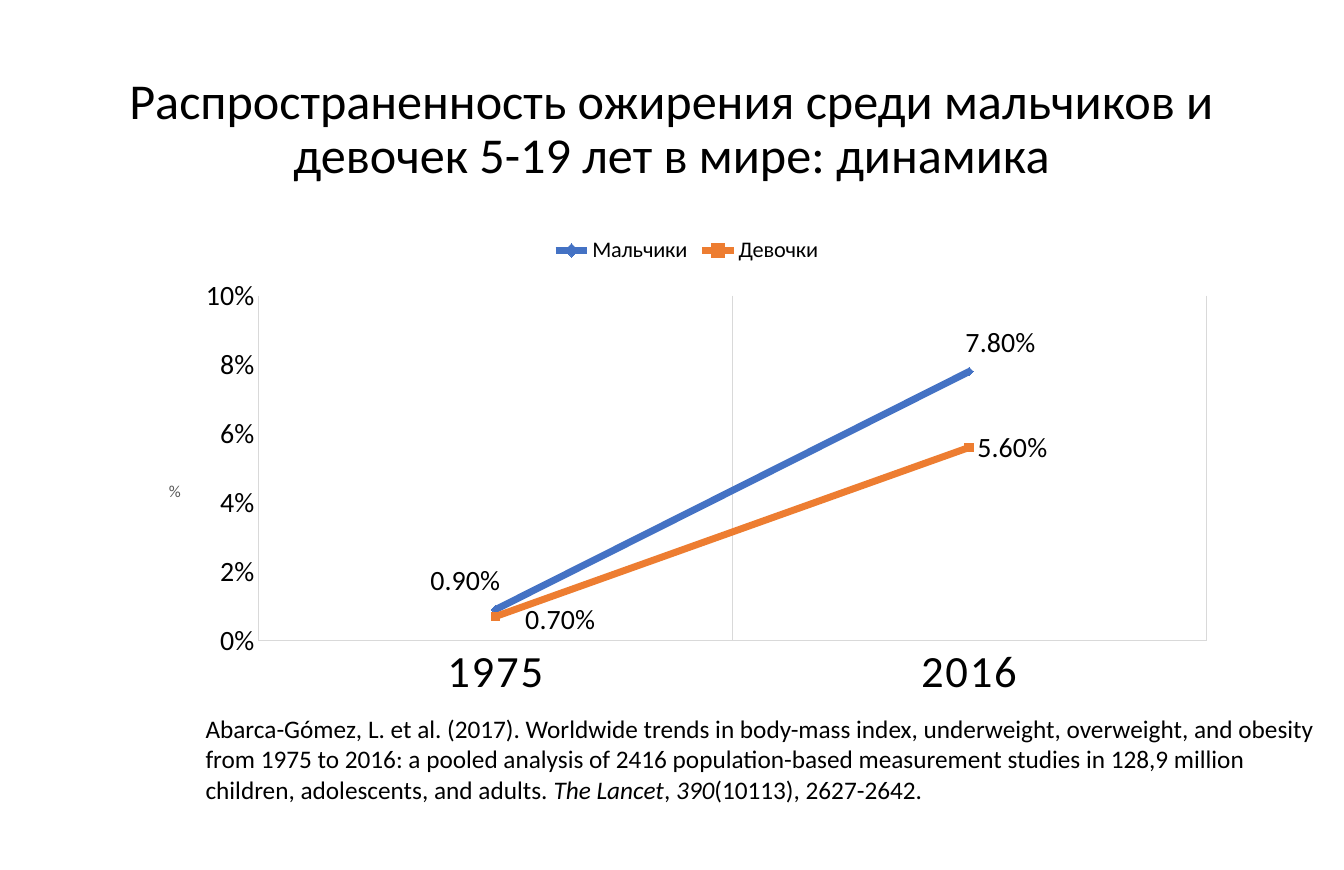
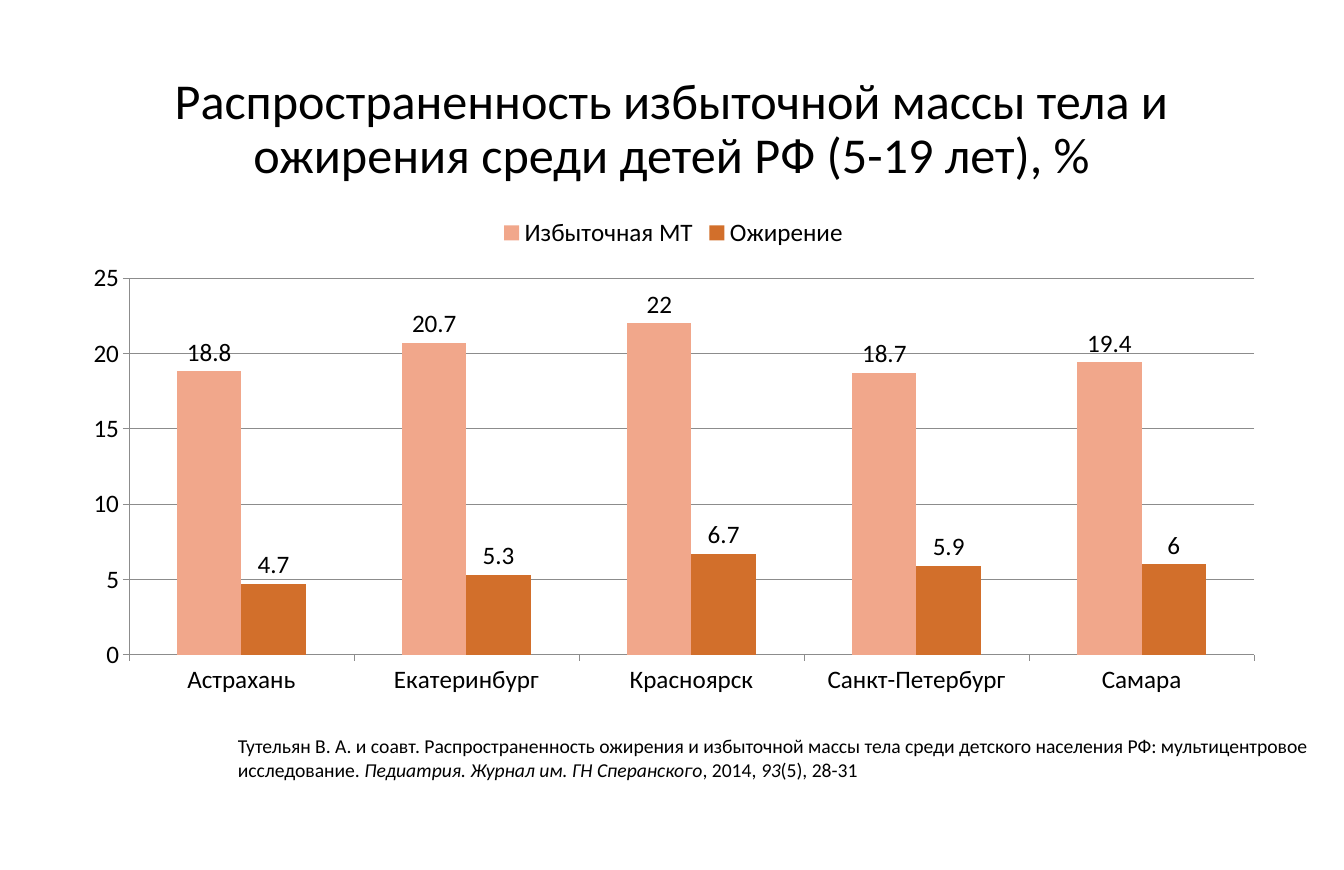
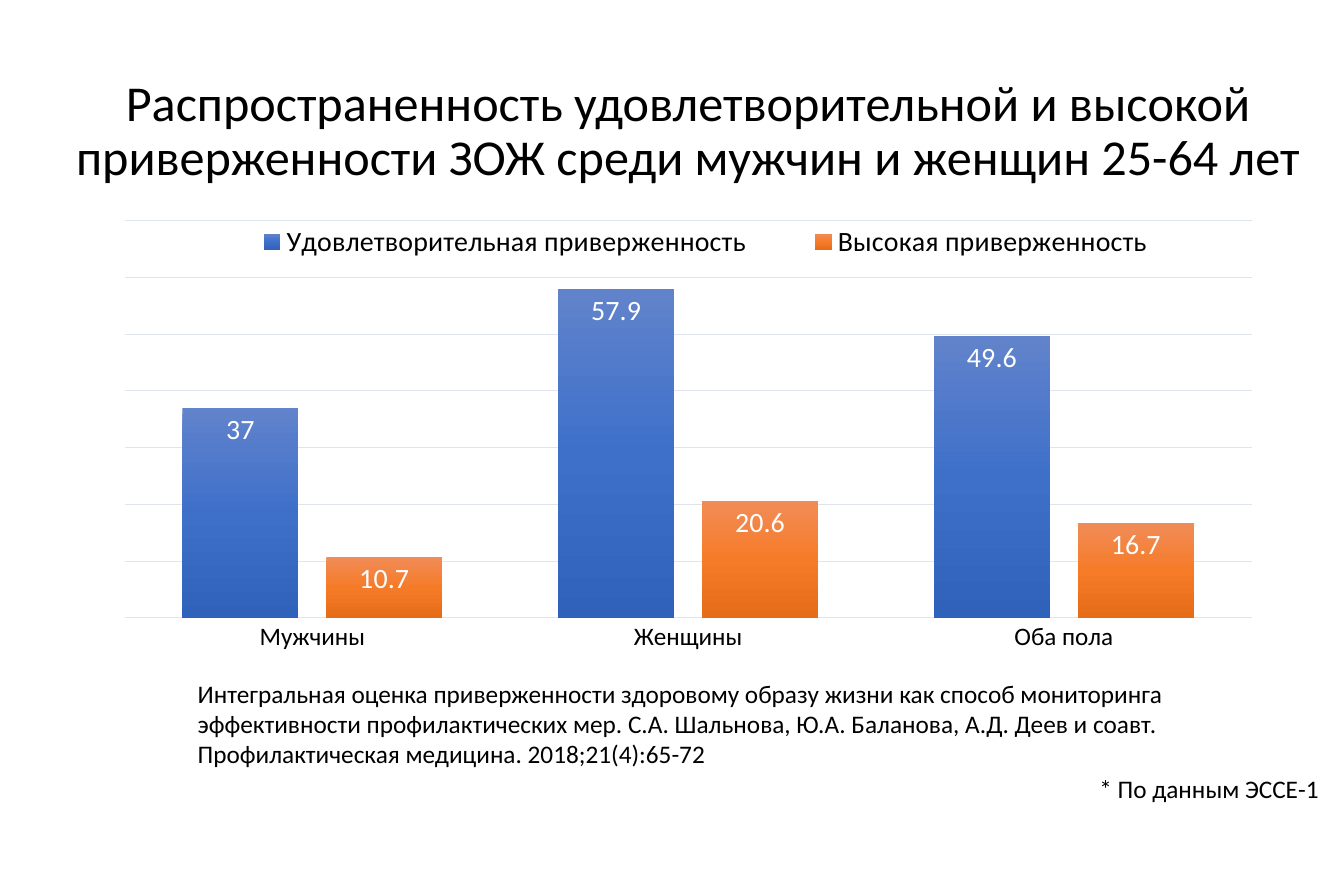
from pptx import Presentation
from pptx.chart.data import CategoryChartData
from pptx.dml.color import RGBColor
from pptx.enum.chart import (XL_CHART_TYPE, XL_LABEL_POSITION, XL_LEGEND_POSITION,
                             XL_MARKER_STYLE, XL_TICK_LABEL_POSITION, XL_TICK_MARK)
from pptx.enum.text import MSO_ANCHOR, PP_ALIGN
from pptx.oxml import parse_xml
from pptx.oxml.ns import nsdecls
from pptx.util import Cm, Pt

LINE = XL_CHART_TYPE.LINE_MARKERS
COLUMN = XL_CHART_TYPE.COLUMN_CLUSTERED
TOP, BOTTOM = XL_LEGEND_POSITION.TOP, XL_LEGEND_POSITION.BOTTOM
RIGHT = XL_LABEL_POSITION.RIGHT
INSIDE_END = XL_LABEL_POSITION.INSIDE_END
OUTSIDE_END = XL_LABEL_POSITION.OUTSIDE_END
NO_TICK, OUTER_TICK = XL_TICK_MARK.NONE, XL_TICK_MARK.OUTSIDE
NO_LABELS = XL_TICK_LABEL_POSITION.NONE
DIAMOND, SQUARE = XL_MARKER_STYLE.DIAMOND, XL_MARKER_STYLE.SQUARE
CENTER, LEFT = PP_ALIGN.CENTER, PP_ALIGN.LEFT
MIDDLE, UPPER = MSO_ANCHOR.MIDDLE, MSO_ANCHOR.TOP

BLACK = RGBColor(0x00, 0x00, 0x00)
WHITE = RGBColor(0xFF, 0xFF, 0xFF)
GRAY = RGBColor(0x59, 0x59, 0x59)
LIGHT_GRAY = RGBColor(0xD9, 0xD9, 0xD9)
MID_GRAY = RGBColor(0x8C, 0x8C, 0x8C)
PALE_BLUE = RGBColor(0xE0, 0xE5, 0xEB)
BLUE = RGBColor(0x44, 0x72, 0xC4)
ORANGE = RGBColor(0xED, 0x7D, 0x31)
SALMON = RGBColor(0xF1, 0xA7, 0x8B)
RUST = RGBColor(0xD2, 0x6F, 0x2B)
BLUE_SHADES = ("6183CB", "3E70CA", "3062BB")
ORANGE_SHADES = ("F18C57", "F67B28", "E56C19")
FONT = "Calibri"
TITLE_BOX = (2.34, 1.17, 29.31, 4.24)


def add_text(slide, box, runs, size, align=LEFT, anchor=UPPER, spacing=1.0):
    frame = slide.shapes.add_textbox(*map(Cm, box)).text_frame
    frame.word_wrap = True
    frame.vertical_anchor = anchor
    paragraph = frame.paragraphs[0]
    paragraph.alignment = align
    paragraph.line_spacing = spacing
    paragraph.font.name = FONT
    paragraph.font.size = Pt(size)
    paragraph.font.color.rgb = BLACK
    for text, italic in runs:
        run = paragraph.add_run()
        run.text = text
        if italic:
            run.font.italic = True


def set_layout(parent, index, settings):
    for old in parent.xpath("./c:layout"):
        parent.remove(old)
    values = "".join(f'<c:{tag} val="{value}"/>' for tag, value in settings)
    parent.insert(index, parse_xml(
        f'<c:layout {nsdecls("c")}><c:manualLayout>{values}</c:manualLayout></c:layout>'))


SLIDES = [
    {
        "title": "Распространенность ожирения среди мальчиков и девочек 5-19 лет в мире: динамика",
        "title_box": TITLE_BOX,
        "kind": LINE,
        "chart_box": (3.73, 5.69, 27.3, 12.24),
        "plot": (0.103, 0.146, 0.878, 0.713),
        "categories": ["1975", "2016"],
        "series": [("Мальчики", (0.009, 0.078)), ("Девочки", (0.007, 0.056))],
        "legend": (TOP, 16),
        "labels": (20, BLACK, RIGHT, "0.00%"),
        "axes": (32, 20, NO_TICK, LIGHT_GRAY, 0.75),
        "scale": (0.1, 0.02, "0%"),
        "notes": [((4.95, 17.91, 29.06, 2.57), 18.1, [
            ("Abarca-Gómez, L. et al. (2017). Worldwide trends in body-mass index, underweight, "
             "overweight, and obesity from 1975 to 2016: a pooled analysis of 2416 "
             "population-based measurement studies in 128,9 million children, adolescents, "
             "and adults. ", False),
            ("The Lancet", True), (", ", False), ("390", True),
            ("(10113), 2627-2642.", False)])],
    },
    {
        "title": "Распространенность избыточной массы тела и ожирения среди детей РФ (5-19 лет), %",
        "title_box": TITLE_BOX,
        "kind": COLUMN,
        "chart_box": (1.73, 5.19, 30.61, 12.62),
        "plot": (0.05, 0.146, 0.93, 0.755),
        "categories": ["Астрахань", "Екатеринбург", "Красноярск", "Санкт-Петербург", "Самара"],
        "series": [("Избыточная МТ", (18.8, 20.7, 22, 18.7, 19.4)),
                   ("Ожирение", (4.7, 5.3, 6.7, 5.9, 6))],
        "legend": (TOP, 18),
        "labels": (18, BLACK, OUTSIDE_END, "General"),
        "axes": (18, 18, OUTER_TICK, MID_GRAY, 0.5),
        "scale": (25, 5, "General"),
        "notes": [((5.77, 18.44, 27.71, 1.45), 14.1, [
            ("Тутельян В. А. и соавт. Распространенность ожирения и избыточной массы тела среди "
             "детского населения РФ: мультицентровое исследование. ", False),
            ("Педиатрия. Журнал им. ГН Сперанского", True), (", 2014, ", False), ("93", True),
            ("(5), 28-31", False)])],
    },
    {
        "title": "Распространенность удовлетворительной и высокой приверженности ЗОЖ "
                 "среди мужчин и женщин 25-64 лет",
        "title_box": (1.35, 1.76, 32.13, 3.18),
        "kind": COLUMN,
        "chart_box": (2.74, 5.19, 29.31, 12.14),
        "plot": (0.014, 0.032, 0.973, 0.828),
        "categories": ["Мужчины", "Женщины", "Оба пола"],
        "series": [("Удовлетворительная приверженность", (37, 57.9, 49.6)),
                   ("Высокая приверженность", (10.7, 20.6, 16.7))],
        "legend": (BOTTOM, 20),
        "labels": (20, WHITE, INSIDE_END, "General"),
        "axes": (18, 12, NO_TICK, PALE_BLUE, 0.75),
        "scale": (70, 10, "General"),
        "notes": [
            ((4.75, 17.02, 28.32, 2.57), 18.1, [
                ("Интегральная оценка приверженности здоровому образу жизни как способ "
                 "мониторинга эффективности профилактических мер. С.А. Шальнова, Ю.А. Баланова, "
                 "А.Д. Деев и соавт. Профилактическая медицина. 2018;21(4):65-72", False)]),
            ((27.56, 19.43, 6.43, 1.04), 18.1, [("* По данным ЭССЕ-1", False)])],
    },
]

prs = Presentation()
prs.slide_width, prs.slide_height = Cm(34), Cm(22)
charts = []

for content in SLIDES:
    slide = prs.slides.add_slide(prs.slide_layouts[6])
    add_text(slide, content["title_box"], [(content["title"], False)], 36, CENTER, MIDDLE, 0.9)

    label_size, label_color, label_position, label_format = content["labels"]
    data = CategoryChartData(number_format=label_format)
    data.categories = content["categories"]
    for name, values in content["series"]:
        data.add_series(name, values)
    chart = slide.shapes.add_chart(content["kind"], *map(Cm, content["chart_box"]), data).chart
    charts.append(chart)
    chart.has_title = False
    chart.font.name = FONT
    chart.font.color.rgb = BLACK
    set_layout(chart._chartSpace.chart.plotArea, 0,
               [("layoutTarget", "inner"), ("xMode", "edge"), ("yMode", "edge"),
                *zip("xywh", content["plot"])])

    chart.has_legend = True
    chart.legend.include_in_layout = False
    chart.legend.position, legend_size = content["legend"]
    chart.legend.font.size = Pt(legend_size)

    category_size, value_size, tick, line_color, line_width = content["axes"]
    for axis, size in ((chart.category_axis, category_size), (chart.value_axis, value_size)):
        axis.major_tick_mark = tick
        axis.minor_tick_mark = NO_TICK
        axis.tick_labels.font.size = Pt(size)
        axis.format.line.color.rgb = line_color
        axis.format.line.width = Pt(line_width)
    chart.value_axis.minimum_scale = 0
    chart.value_axis.maximum_scale, chart.value_axis.major_unit, axis_format = content["scale"]
    chart.value_axis.tick_labels.number_format = axis_format
    chart.value_axis.tick_labels.number_format_is_linked = False

    is_line = content["kind"] == LINE
    chart.category_axis.has_major_gridlines = is_line
    chart.value_axis.has_major_gridlines = not is_line
    grid_axis = chart.category_axis if is_line else chart.value_axis
    grid_axis.major_gridlines.format.line.color.rgb = line_color
    grid_axis.major_gridlines.format.line.width = Pt(line_width)

    chart.plots[0].vary_by_categories = False
    for series in chart.plots[0].series:
        labels = series.data_labels
        labels.show_value = True
        labels.position = label_position
        labels.number_format = label_format
        labels.number_format_is_linked = False
        labels.font.size = Pt(label_size)
        labels.font.color.rgb = label_color
        for leader_lines in series._element.xpath(".//c:showLeaderLines"):
            leader_lines.set("val", "0")

    for box, size, runs in content["notes"]:
        add_text(slide, box, runs, size)

world, cities, adherence = charts

LABEL_SHIFTS = [[(-0.068, -0.06), (-0.011, -0.06)], [(0.02, 0.006)]]
for series, color, marker, shifts in zip(world.plots[0].series, (BLUE, ORANGE),
                                         (DIAMOND, SQUARE), LABEL_SHIFTS):
    series.smooth = False
    series.format.line.color.rgb = color
    series.format.line.width = Pt(5)
    series.marker.style = marker
    series.marker.size = 6
    series.marker.format.fill.solid()
    series.marker.format.fill.fore_color.rgb = color
    series.marker.format.line.color.rgb = color
    for index, shift in enumerate(shifts):
        label = series.points[index].data_label
        label.position = RIGHT
        label.font.size = Pt(20)
        label.font.color.rgb = BLACK
        set_layout(series._element.xpath(".//c:dLbl")[index], 1, zip("xy", shift))

world.category_axis.tick_labels.font._rPr.set("spc", "120")
percent = world.value_axis.axis_title
percent.text_frame.text = "%"
percent_font = percent.text_frame.paragraphs[0].font
percent_font.size = Pt(12)
percent_font.bold = False
percent_font.color.rgb = GRAY
percent._element.xpath(".//a:bodyPr")[0].set("rot", "0")
set_layout(percent._element, 1, [("xMode", "edge"), ("yMode", "edge"), ("x", 0.017), ("y", 0.52)])

cities.plots[0].gap_width = 150
cities.plots[0].overlap = 0
for series, color in zip(cities.plots[0].series, (SALMON, RUST)):
    series.format.fill.solid()
    series.format.fill.fore_color.rgb = color

adherence.plots[0].gap_width = 100
adherence.plots[0].overlap = -24
adherence.value_axis.tick_label_position = NO_LABELS
adherence.value_axis.format.line.fill.background()
set_layout(adherence.legend._element, 1,
           [("xMode", "edge"), ("yMode", "edge"), *zip("xywh", (0.083, 0.039, 0.865, 0.075))])
for series, shades in zip(adherence.plots[0].series, (BLUE_SHADES, ORANGE_SHADES)):
    stops = "".join(f'<a:gs pos="{index * 50000}"><a:srgbClr val="{shade}"/></a:gs>'
                    for index, shade in enumerate(shades))
    series._element.get_or_add_spPr().append(parse_xml(
        f'<a:gradFill {nsdecls("a")} rotWithShape="1"><a:gsLst>{stops}</a:gsLst>'
        '<a:lin ang="5400000" scaled="0"/></a:gradFill>'))

prs.save("out.pptx")
